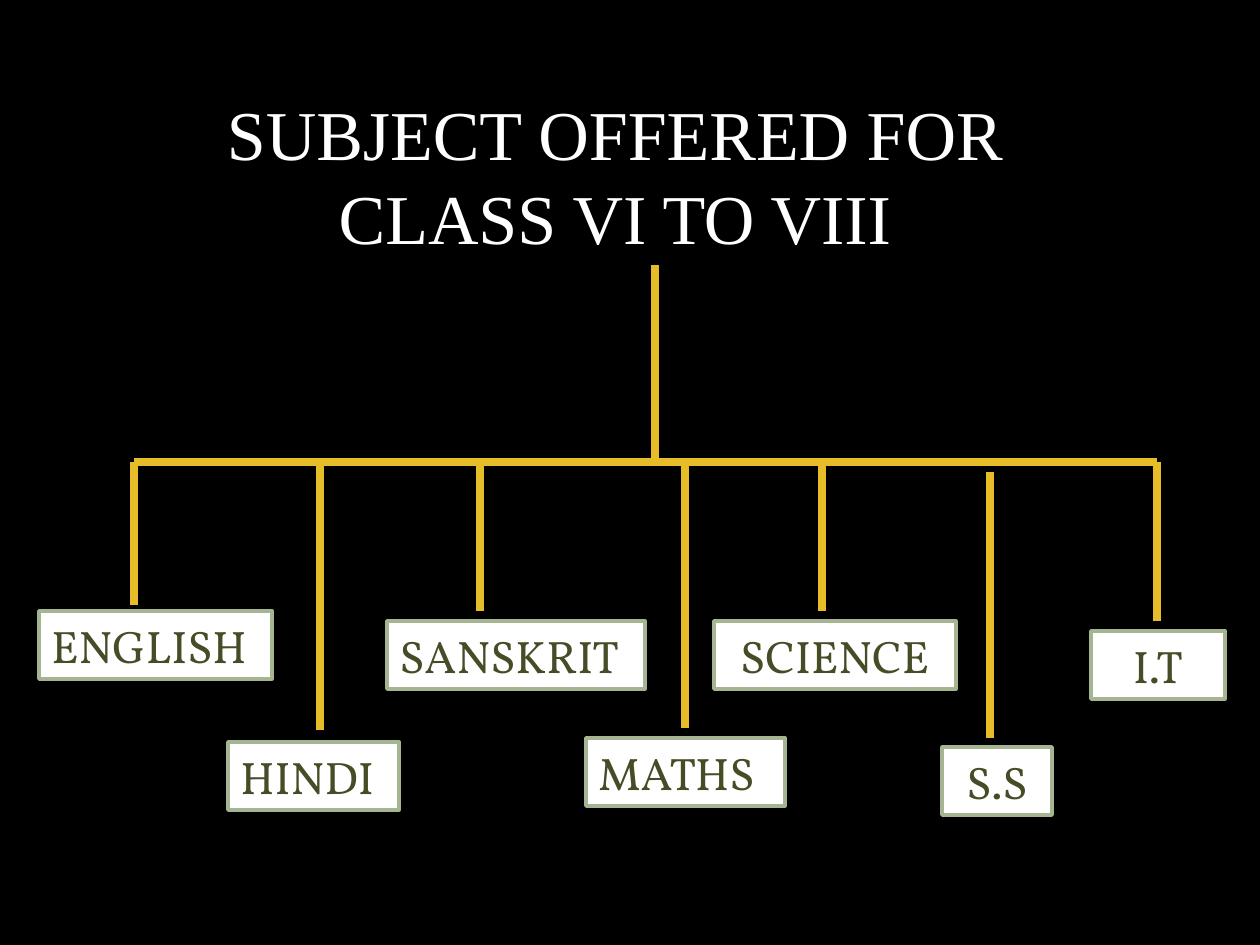
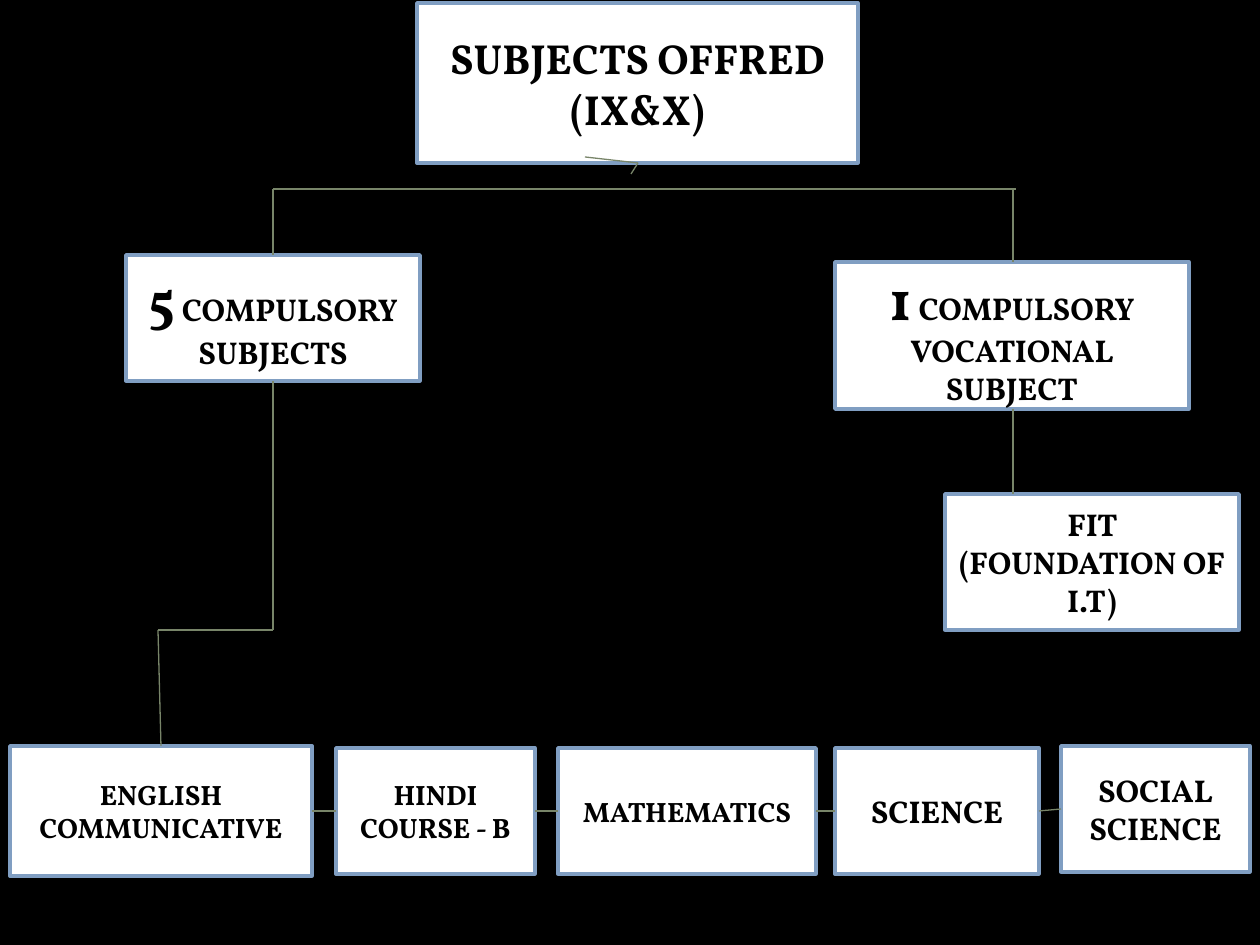
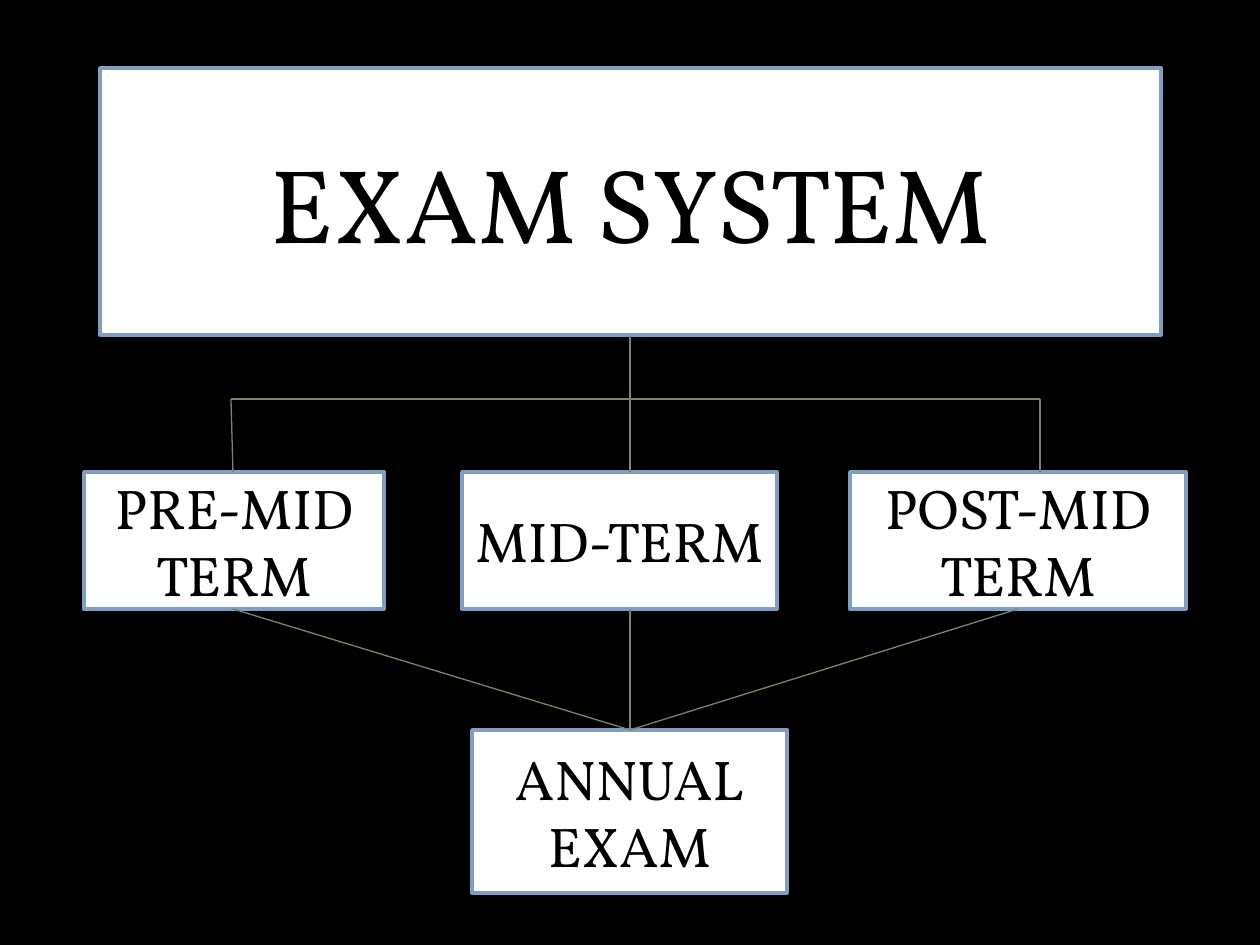
import itertools

import pptx
import pptx.dml.color
import pptx.enum.shapes
import pptx.enum.text
import pptx.oxml.ns
import pptx.util
from lxml import etree

PX = 914400 / 126
COLORS = {
    "back": "000000",
    "white": "FFFFFF",
    "black": "000000",
    "olive": "444D26",
    "green": "A5B592",
    "blue": "809EC2",
    "gold": "E7BC29",
    "sage": "788569",
}
ALIGN = pptx.enum.text.PP_ALIGN


def emu(px):
    return pptx.util.Emu(round(px * PX))


def rgb(name):
    return pptx.dml.color.RGBColor.from_string(COLORS[name])


def write(tf, text, size=18, color="black", font="Vollkorn", bold=False,
          align=ALIGN.CENTER, lead="", lead_size=32):
    tf.word_wrap = True
    for i, line in enumerate(text.split("\n")):
        p = tf.add_paragraph() if i else tf.paragraphs[0]
        p.alignment = align
        runs = [(lead, lead_size), (line, size)] if lead and not i else [(line, size)]
        for part, points in runs:
            r = p.add_run()
            r.text = part
            r.font.name = font
            r.font.size = pptx.util.Pt(points)
            r.font.bold = bold
            r.font.color.rgb = rgb(color)


class Deck:
    def __init__(self):
        self.prs = pptx.Presentation()
        self.prs.slide_width = emu(1260)
        self.prs.slide_height = emu(945)
        self.s = None

    def slide(self):
        self.s = self.prs.slides.add_slide(self.prs.slide_layouts[6])
        fill = self.s.background.fill
        fill.solid()
        fill.fore_color.rgb = rgb("back")

    def label(self, text, x, y, w, h, **fmt):
        sp = self.s.shapes.add_textbox(emu(x), emu(y), emu(w), emu(h))
        write(sp.text_frame, text, **fmt)

    def box(self, text, x, y, w, h, line="blue", **fmt):
        sp = self.s.shapes.add_shape(pptx.enum.shapes.MSO_SHAPE.RECTANGLE,
                                     emu(x), emu(y), emu(w), emu(h))
        sp.shadow.inherit = False
        sp.fill.solid()
        sp.fill.fore_color.rgb = rgb("white")
        sp.line.color.rgb = rgb(line)
        sp.line.width = pptx.util.Pt(2)
        sp.text_frame.vertical_anchor = pptx.enum.text.MSO_ANCHOR.MIDDLE
        write(sp.text_frame, text, **fmt)
        return sp

    def line(self, start, end, color="sage", width=0.75):
        c = self.s.shapes.add_connector(pptx.enum.shapes.MSO_CONNECTOR.STRAIGHT,
                                        *map(emu, start + end))
        c.line.color.rgb = rgb(color)
        c.line.width = pptx.util.Pt(width)
        etree.SubElement(c._element.spPr, pptx.oxml.ns.qn("a:effectLst"))
        return c

    def chain(self, *points, **fmt):
        for start, end in itertools.pairwise(points):
            self.line(start, end, **fmt)

    def link(self, left, right):
        c = self.line((0, 0), (0, 0))
        c.begin_connect(left, 3)
        c.end_connect(right, 1)


def middle_classes(deck):
    deck.slide()
    deck.label("SUBJECT OFFERED FOR CLASS VI TO VIII", 116, 84, 998, 183,
               size=40, color="white", font="Times New Roman")
    subjects = [
        ("ENGLISH", 39, 611, 233, ALIGN.LEFT),
        ("HINDI", 228, 742, 171, ALIGN.LEFT),
        ("SANSKRIT", 387, 621, 258, ALIGN.LEFT),
        ("MATHS", 586, 738, 199, ALIGN.LEFT),
        ("SCIENCE", 714, 621, 242, ALIGN.CENTER),
        ("S.S", 942, 747, 110, ALIGN.CENTER),
        ("I.T", 1091, 631, 134, ALIGN.CENTER),
    ]
    for text, x, y, w, align in subjects:
        deck.box(text, x, y, w, 68, line="green", size=26, color="olive", align=align)
    rail = 462
    drops = [(134, rail, 605), (320, rail, 730), (480, rail, 611), (685, rail, 728),
             (822, rail, 611), (990, 472, 738), (1157, rail, 621)]
    gold = dict(color="gold", width=4.5)
    deck.line((655, 265), (655, rail), **gold)
    deck.line((134, rail), (1157, rail), **gold)
    for x, top, bottom in drops:
        deck.line((x, top), (x, bottom), **gold)


def secondary_classes(deck):
    deck.slide()
    deck.box("SUBJECTS OFFRED (IX&X)", 417, 3, 441, 160, size=24, bold=True)
    deck.box(" COMPULSORY SUBJECTS", 126, 255, 294, 126, lead="5", bold=True)
    deck.box(" COMPULSORY VOCATIONAL SUBJECT", 835, 262, 354, 147, lead="1", bold=True)
    deck.box("FIT (FOUNDATION OF I.T)", 945, 494, 294, 136, bold=True)
    compulsory = [
        ("ENGLISH COMMUNICATIVE", 10, 746, 302, 130, 16),
        ("HINDI\nCOURSE - B", 336, 748, 199, 126, 16),
        ("MATHEMATICS", 558, 748, 258, 126, 16),
        ("SCIENCE", 835, 748, 204, 126, 18),
        ("SOCIAL SCIENCE", 1061, 746, 189, 126, 18),
    ]
    row = [deck.box(*place, size=size, bold=True) for *place, size in compulsory]
    for left, right in itertools.pairwise(row):
        deck.link(left, right)
    deck.chain((585, 157), (638, 163), (631, 174))
    deck.chain((640, 189), (273, 189), (273, 255))
    deck.chain((640, 189), (1016, 189))
    deck.chain((1013, 189), (1013, 262))
    deck.chain((1013, 409), (1013, 494))
    deck.chain((273, 381), (273, 630), (158, 630), (161, 746))


def exam_system(deck):
    deck.slide()
    deck.box("EXAM SYSTEM", 100, 68, 1061, 267, size=60)
    exams = [
        ("PRE-MID TERM", 84, 472, 300, 137),
        ("MID-TERM", 462, 472, 315, 137),
        ("POST-MID TERM", 850, 472, 336, 137),
        ("ANNUAL EXAM", 472, 730, 315, 163),
    ]
    for exam in exams:
        deck.box(*exam, size=32)
    fork, annual = (630, 399), (630, 730)
    deck.chain((630, 336), fork, (630, 472))
    deck.chain(fork, (1040, 399), (1040, 472))
    deck.chain(fork, (231, 399), (233, 472))
    for x in (233, 630, 1018):
        deck.line((x, 609), annual)


def main():
    deck = Deck()
    middle_classes(deck)
    secondary_classes(deck)
    exam_system(deck)
    deck.prs.save("out.pptx")


if __name__ == "__main__":
    main()
